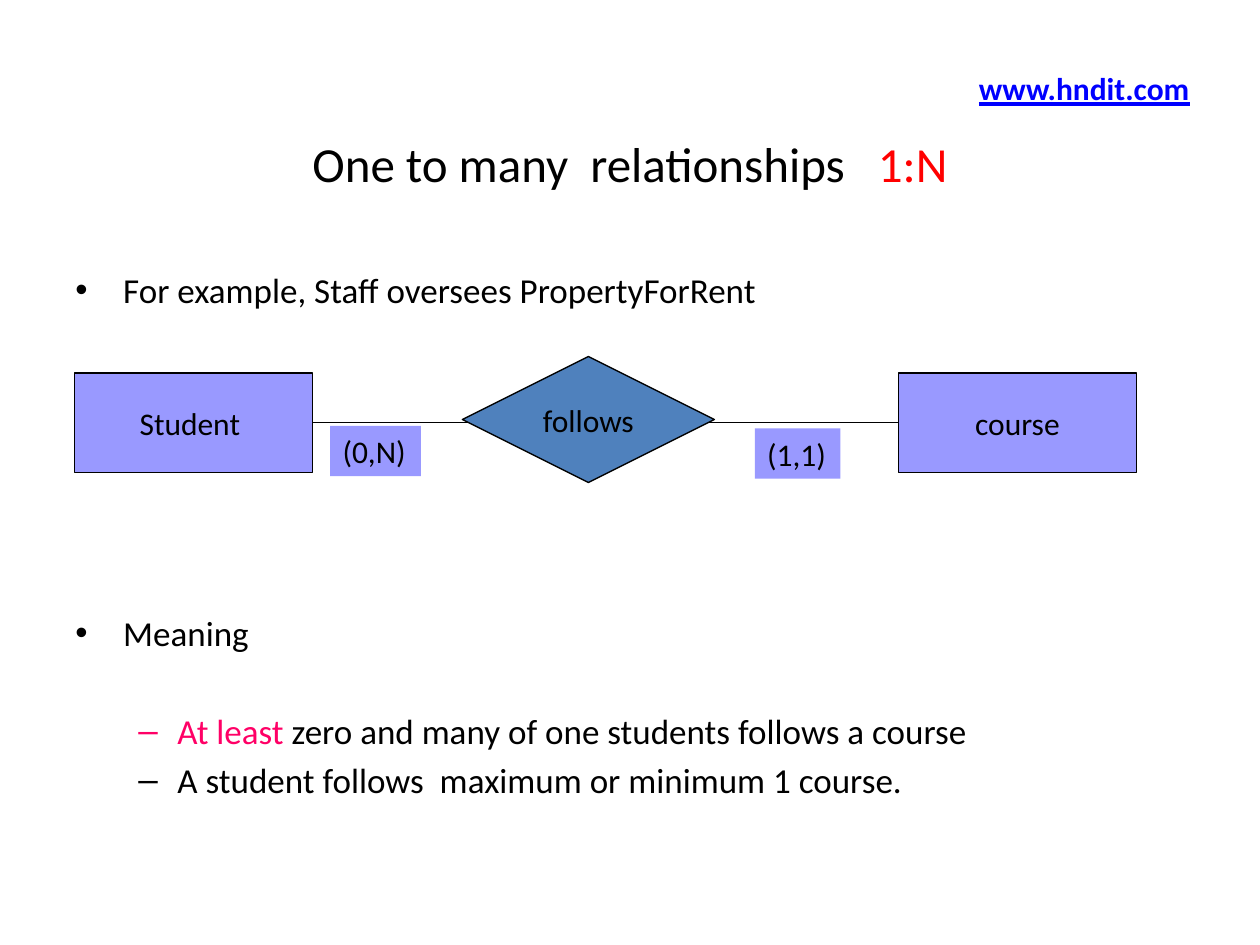
from dataclasses import dataclass

from lxml.etree import SubElement
from pptx import Presentation
from pptx.dml.color import RGBColor
from pptx.enum.shapes import MSO_CONNECTOR, MSO_SHAPE
from pptx.enum.text import MSO_ANCHOR, PP_ALIGN
from pptx.oxml.ns import qn
from pptx.util import Inches, Pt

BLACK = RGBColor(0, 0, 0)
RED = RGBColor(0xFF, 0, 0)
PINK = RGBColor(0xFF, 0, 0x66)
LINK_BLUE = RGBColor(0, 0, 0xFF)
LILAC = RGBColor(0x99, 0x99, 0xFF)
STEEL = RGBColor(0x4F, 0x81, 0xBD)
FONT = "Calibri"
CELL = Inches(0.1)  # the slide is a grid of 100 columns by 75 rows


@dataclass(frozen=True)
class Area:
    column: float
    row: float
    columns: float
    rows: float

    def lengths(self) -> list[int]:
        return [round(n * CELL) for n in (self.column, self.row, self.columns, self.rows)]


@dataclass(frozen=True)
class Node:
    label: str
    area: Area
    kind: MSO_SHAPE = MSO_SHAPE.RECTANGLE
    fill: RGBColor = LILAC
    outlined: bool = True


@dataclass(frozen=True)
class Point:
    phrases: tuple[tuple[str, RGBColor], ...]
    level: int = 0
    space_before: float = 4


ENTITY_ROW, ENTITY_COLUMNS, ENTITY_ROWS = 29.6, 18.9, 7.9
STUDENT = Node("Student ", Area(5.9, ENTITY_ROW, ENTITY_COLUMNS, ENTITY_ROWS))
COURSE = Node("course", Area(71.3, ENTITY_ROW, ENTITY_COLUMNS, ENTITY_ROWS))
FOLLOWS = Node("follows", Area(36.7, 28.3, 20, 10), MSO_SHAPE.DIAMOND, STEEL)
CARDINALITIES = (
    Node("(0,N)", Area(26.2, 33.8, 7.2, 4), outlined=False),
    Node("(1,1)", Area(59.9, 34, 6.8, 4), outlined=False),
)
POINTS = (
    Point((("For example, Staff oversees PropertyForRent", BLACK),), space_before=0),
    Point((("Meaning", BLACK),), space_before=172),
    Point((("At least", PINK), (" zero and many of one students follows a course", BLACK)),
          level=1, space_before=32),
    Point((("A student follows  maximum or minimum 1 course.", BLACK),), level=1),
)
BULLETS = (("•", 0.38, 0.38), ("–", 0.81, 0.31))  # mark, margin, hanging indent


def style(run, size: float, color: RGBColor) -> None:
    run.font.name = FONT
    run.font.size = Pt(size)
    run.font.color.rgb = color


def add_phrases(paragraph, phrases: tuple[tuple[str, RGBColor], ...], size: float) -> None:
    for words, color in phrases:
        run = paragraph.add_run()
        run.text = words
        style(run, size, color)


def add_node(slide, node: Node):
    shape = slide.shapes.add_shape(node.kind, *node.area.lengths())
    shape.shadow.inherit = False
    shape.fill.solid()
    shape.fill.fore_color.rgb = node.fill
    if node.outlined:
        shape.line.color.rgb = BLACK
        shape.line.width = Pt(0.75)
    else:
        shape.line.fill.background()
    frame = shape.text_frame
    frame.text = node.label
    frame.word_wrap = False
    frame.vertical_anchor = MSO_ANCHOR.MIDDLE if node.outlined else MSO_ANCHOR.TOP
    paragraph = frame.paragraphs[0]
    paragraph.alignment = PP_ALIGN.CENTER if node.outlined else PP_ALIGN.LEFT
    style(paragraph.runs[0], 18, BLACK)
    return shape


def join(slide, start, end) -> None:
    """Link the right side of start to the left side of end."""
    link = slide.shapes.add_connector(MSO_CONNECTOR.STRAIGHT, 0, 0, 0, 0)
    link.begin_connect(start, 3)
    link.end_connect(end, 1)
    link.line.color.rgb = BLACK
    link.line.width = Pt(0.75)
    SubElement(link._element.spPr, qn("a:effectLst"))


def add_points(slide, area: Area, points: tuple[Point, ...]) -> None:
    frame = slide.shapes.add_textbox(*area.lengths()).text_frame
    frame.word_wrap = True
    for index, point in enumerate(points):
        paragraph = frame.add_paragraph() if index else frame.paragraphs[0]
        paragraph.level = point.level
        paragraph.space_before = Pt(point.space_before)
        mark, margin, hanging = BULLETS[point.level]
        properties = paragraph._p.get_or_add_pPr()
        properties.set("marL", str(Inches(margin)))
        properties.set("indent", str(-Inches(hanging)))
        SubElement(properties, qn("a:buFont"), typeface="Arial")
        SubElement(properties, qn("a:buChar"), char=mark)
        add_phrases(paragraph, point.phrases, 20)


def set_title(title, area: Area) -> None:
    title.left, title.top, title.width, title.height = area.lengths()
    title.text_frame.vertical_anchor = MSO_ANCHOR.MIDDLE
    heading = title.text_frame.paragraphs[0]
    heading.alignment = PP_ALIGN.CENTER
    add_phrases(heading, (("One to many  relationships   ", BLACK), ("1:N", RED)), 28)


def add_site(slide, area: Area, address: str) -> None:
    frame = slide.shapes.add_textbox(*area.lengths()).text_frame
    frame.word_wrap = False
    frame.text = address
    run = frame.paragraphs[0].runs[0]
    style(run, 18, LINK_BLUE)
    run.font.bold = True
    run.font.underline = True


def main() -> None:
    deck = Presentation()
    deck.slide_width, deck.slide_height = 100 * CELL, 75 * CELL
    slide = deck.slides.add_slide(deck.slide_layouts[5])
    set_title(slide.shapes.title, Area(5, 6.7, 90, 12.5))
    add_points(slide, Area(5, 20.8, 90, 46.2), POINTS)
    student, course = (add_node(slide, entity) for entity in (STUDENT, COURSE))
    join(slide, student, course)
    for node in (*CARDINALITIES, FOLLOWS):
        add_node(slide, node)
    add_site(slide, Area(76.7, 5, 18.8, 4), "www.hndit.com")
    deck.save("out.pptx")


if __name__ == "__main__":
    main()
